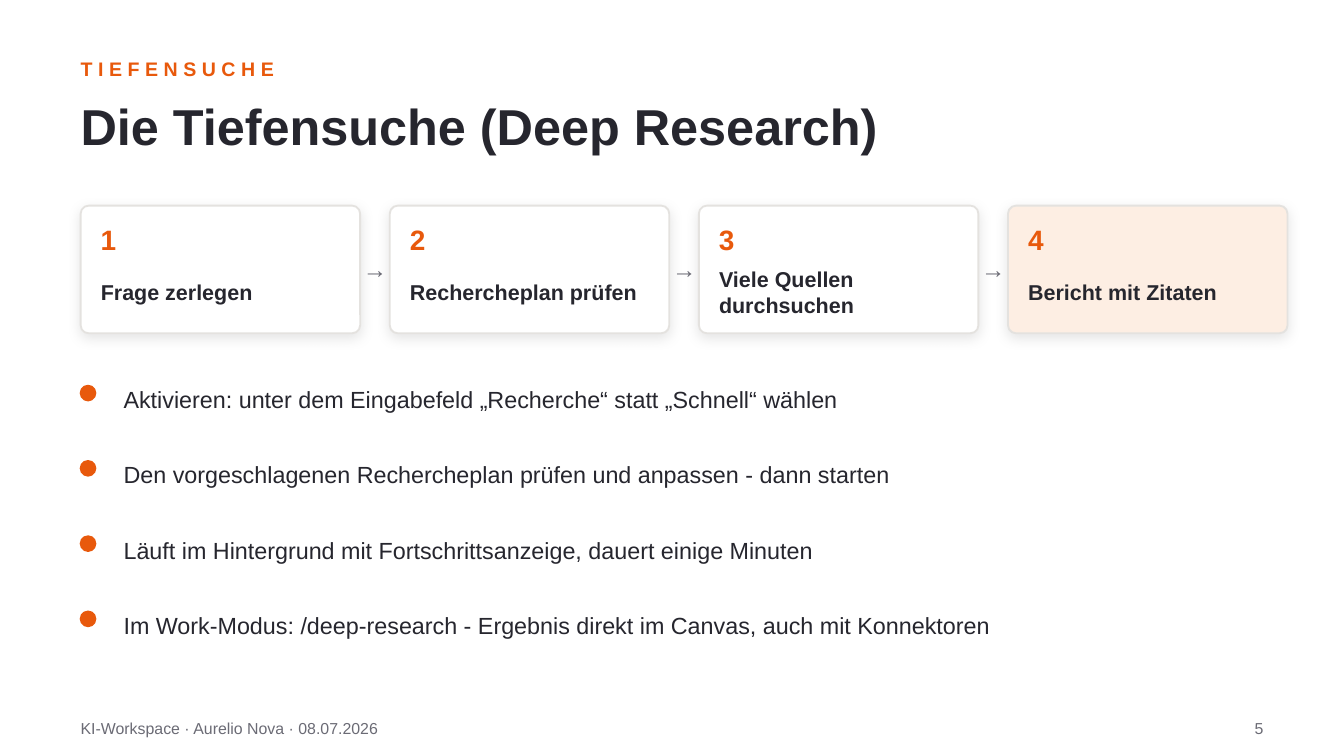
from dataclasses import dataclass

from lxml.etree import SubElement
from pptx import Presentation
from pptx.dml.color import RGBColor
from pptx.enum.shapes import MSO_SHAPE as Preset
from pptx.enum.text import MSO_ANCHOR as Anchor, PP_ALIGN as Align
from pptx.oxml.ns import qn
from pptx.shapes.autoshape import Shape
from pptx.slide import Slide
from pptx.util import Inches, Pt


@dataclass(frozen=True)
class Theme:
    font: str = "Arial"
    accent: str = "E8590C"
    ink: str = "26262E"
    muted: str = "6B6B75"
    card: str = "FFFFFF"
    highlight: str = "FDEEE3"
    border: str = "E4E2DF"
    title_size: float = 27
    number_size: float = 15
    arrow_size: float = 13
    body_size: float = 12.5
    label_size: float = 11.5
    eyebrow_size: float = 10.5
    footer_size: float = 8.5


@dataclass(frozen=True)
class Box:
    left: float
    top: float
    width: float
    height: float

    def lengths(self) -> list[Inches]:
        return [Inches(value) for value in (self.left, self.top, self.width, self.height)]


@dataclass(frozen=True)
class Step:
    label: str
    fill: str


THEME = Theme()
SLIDE_WIDTH = 10
SLIDE_HEIGHT = SLIDE_WIDTH * 9 / 16
MARGIN = 0.6
CARD_TOP, CARD_WIDTH, CARD_HEIGHT, CARD_PITCH = 1.53, 2.08, 0.95, 2.3
CARD_PADDING = 0.15
BULLET_TOP, BULLET_PITCH, DOT_SIZE = 2.72, 0.56, 0.11
FOOTER_TOP = 5.3

STEPS = [
    Step("Frage zerlegen", THEME.card),
    Step("Rechercheplan prüfen", THEME.card),
    Step("Viele Quellen durchsuchen", THEME.card),
    Step("Bericht mit Zitaten", THEME.highlight),
]
BULLETS = [
    "Aktivieren: unter dem Eingabefeld „Recherche“ statt „Schnell“ wählen",
    "Den vorgeschlagenen Rechercheplan prüfen und anpassen - dann starten",
    "Läuft im Hintergrund mit Fortschrittsanzeige, dauert einige Minuten",
    "Im Work-Modus: /deep-research - Ergebnis direkt im Canvas, auch mit Konnektoren",
]


def add_text(slide: Slide, box: Box, text: str, *, size: float, color: str = THEME.ink,
             bold: bool = False, align: Align = Align.LEFT, spacing: float = 0) -> None:
    """Add a middle-anchored text box without insets; spacing is in points."""
    frame = slide.shapes.add_textbox(*box.lengths()).text_frame
    frame.word_wrap = True
    frame.vertical_anchor = Anchor.MIDDLE
    frame.margin_left = frame.margin_right = frame.margin_top = frame.margin_bottom = 0
    paragraph = frame.paragraphs[0]
    paragraph.alignment = align
    run = paragraph.add_run()
    run.text = text
    run.font.name = THEME.font
    run.font.size = Pt(size)
    run.font.bold = bold
    run.font.color.rgb = RGBColor.from_string(color)
    if spacing:
        run.font._element.set("spc", str(round(spacing * 100)))


def add_shape(slide: Slide, preset: Preset, box: Box, fill: str, line: str) -> Shape:
    shape = slide.shapes.add_shape(preset, *box.lengths())
    shape.fill.solid()
    shape.fill.fore_color.rgb = RGBColor.from_string(fill)
    shape.line.color.rgb = RGBColor.from_string(line)
    shape.line.width = Pt(1)
    shape.shadow.inherit = False
    return shape


def add_soft_shadow(shape: Shape) -> None:
    effects = shape._element.spPr.find(qn("a:effectLst"))
    shadow = SubElement(effects, qn("a:outerShdw"), blurRad=str(Pt(7)), dist=str(Pt(2)),
                        dir="5400000", algn="bl", rotWithShape="0")
    color = SubElement(shadow, qn("a:srgbClr"), val="000000")
    SubElement(color, qn("a:alpha"), val="10000")


def add_step(slide: Slide, index: int, step: Step) -> None:
    left = MARGIN + index * CARD_PITCH
    card = add_shape(slide, Preset.ROUNDED_RECTANGLE,
                     Box(left, CARD_TOP, CARD_WIDTH, CARD_HEIGHT), step.fill, THEME.border)
    card.adjustments[0] = 0.063
    add_soft_shadow(card)
    text_left = left + CARD_PADDING
    add_text(slide, Box(text_left, CARD_TOP + 0.1, 0.4, 0.3), str(index + 1),
             size=THEME.number_size, color=THEME.accent, bold=True)
    add_text(slide, Box(text_left, CARD_TOP + 0.39, CARD_WIDTH - 2 * CARD_PADDING, 0.5),
             step.label, size=THEME.label_size, bold=True)
    if index < len(STEPS) - 1:
        add_text(slide, Box(left + CARD_WIDTH - 0.04, CARD_TOP + 0.29, 0.3, 0.36), "→",
                 size=THEME.arrow_size, color=THEME.muted, align=Align.CENTER)


def add_bullet(slide: Slide, index: int, text: str) -> None:
    top = BULLET_TOP + index * BULLET_PITCH
    add_shape(slide, Preset.OVAL, Box(MARGIN, top + 0.15, DOT_SIZE, DOT_SIZE),
              THEME.accent, THEME.accent)
    add_text(slide, Box(MARGIN + 0.32, top, 8.5, 0.5), text, size=THEME.body_size)


def main() -> None:
    presentation = Presentation()
    presentation.slide_width = Inches(SLIDE_WIDTH)
    presentation.slide_height = Inches(SLIDE_HEIGHT)
    slide = presentation.slides.add_slide(presentation.slide_layouts[6])

    add_text(slide, Box(MARGIN, 0.38, 8.8, 0.26), "TIEFENSUCHE",
             size=THEME.eyebrow_size, color=THEME.accent, bold=True, spacing=3)
    add_text(slide, Box(MARGIN, 0.62, 8.8, 0.62), "Die Tiefensuche (Deep Research)",
             size=THEME.title_size, bold=True)
    for index, step in enumerate(STEPS):
        add_step(slide, index, step)
    for index, text in enumerate(BULLETS):
        add_bullet(slide, index, text)
    add_text(slide, Box(MARGIN, FOOTER_TOP, 6, 0.24), "KI-Workspace · Aurelio Nova · 08.07.2026",
             size=THEME.footer_size, color=THEME.muted)
    add_text(slide, Box(8.8, FOOTER_TOP, 0.6, 0.24), "5",
             size=THEME.footer_size, color=THEME.muted, align=Align.RIGHT)

    presentation.save("out.pptx")


if __name__ == "__main__":
    main()
